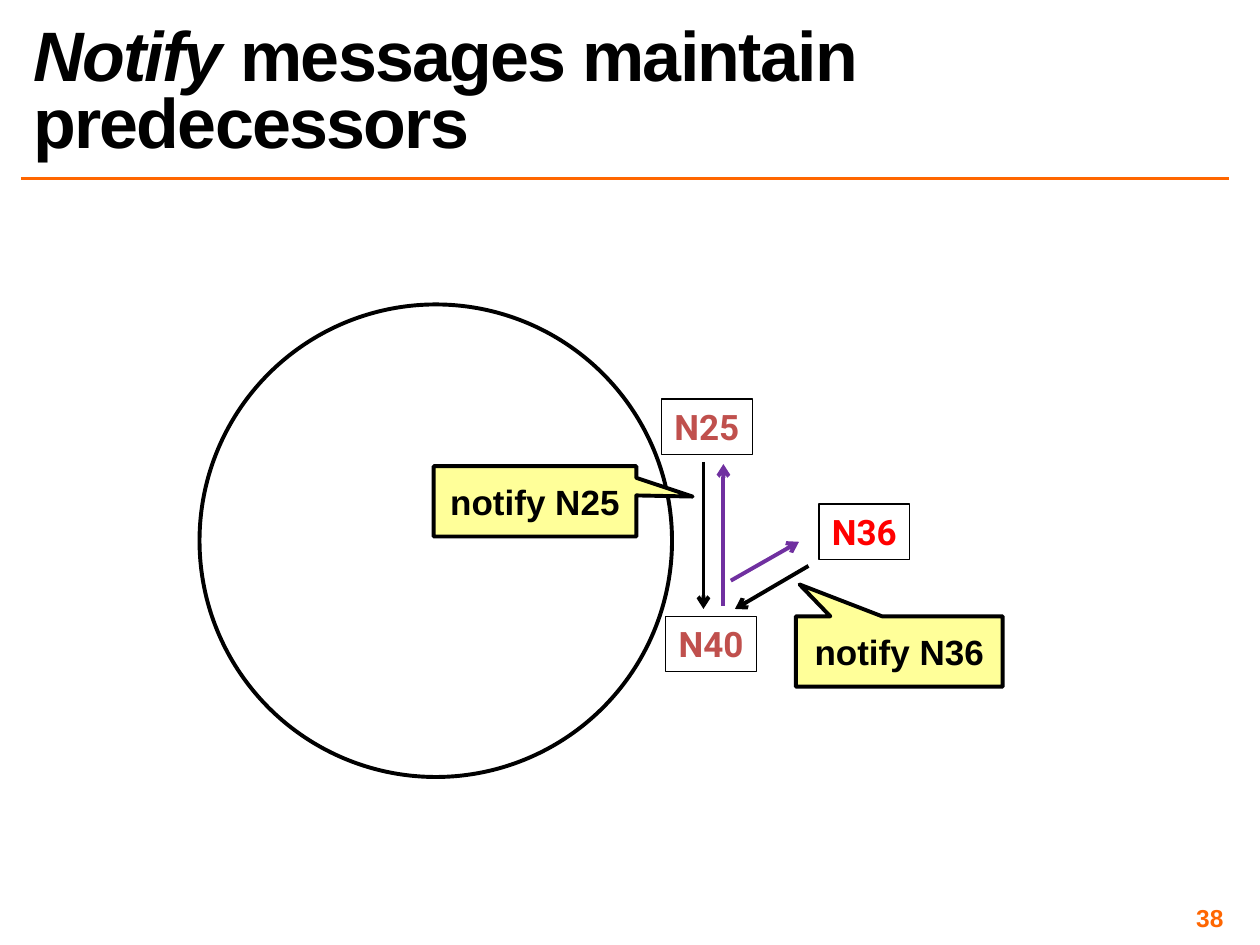
import lxml.etree
import pptx
import pptx.dml.color
import pptx.enum.shapes
import pptx.enum.text
import pptx.oxml.ns
import pptx.util

THEME = {
    "ink": "000000", "accent": "FF6600", "node": "C0504D", "new_node": "FF0000",
    "pointer": "7030A0", "callout": "FFFF99",
    "font": "Arial", "node_font": "Roboto",
    "title": 40, "body": 20, "number": 14,
    "thin": 0.75, "rule": 2, "thick": 2.25,
}
SHAPE = pptx.enum.shapes.MSO_SHAPE
ALIGN = pptx.enum.text.PP_ALIGN
ANCHOR = pptx.enum.text.MSO_ANCHOR
qn = pptx.oxml.ns.qn
rgb = pptx.dml.color.RGBColor.from_string

deck = pptx.Presentation()
deck.slide_width, deck.slide_height = pptx.util.Inches(10), pptx.util.Inches(7.5)
slide = deck.slides.add_slide(deck.slide_layouts[6])

# Grid of 120 columns by 90 rows; a cell is square
CELL = deck.slide_width / 120


def grid(*counts):
    return [pptx.util.Emu(round(count * CELL)) for count in counts]


def style_text(frame, size, color, align, anchor, font=THEME["font"]):
    frame.vertical_anchor = anchor
    for paragraph in frame.paragraphs:
        paragraph.alignment = align
        for run in paragraph.runs:
            run.font.size = pptx.util.Pt(THEME[size])
            run.font.name = font
            run.font.bold = True
            run.font.color.rgb = rgb(THEME[color])


# Title
title = slide.shapes.add_textbox(*grid(2, 2, 115, 14)).text_frame
title.word_wrap = True
heading = title.paragraphs[0]
heading.line_spacing = 0.8
for words, italic in (("Notify", True), (" messages maintain predecessors", False)):
    run = heading.add_run()
    run.text = words
    run.font.italic = italic
    run.font._element.set("spc", "-100")
style_text(title, "title", "ink", ALIGN.LEFT, ANCHOR.BOTTOM)

# Page number
number = slide.shapes.add_textbox(*grid(89, 86, 28, 2.8)).text_frame
number.margin_left = number.margin_right = pptx.util.Inches(0.04)
number.margin_top = number.margin_bottom = pptx.util.Inches(0.04)
number.word_wrap = True
number.text = "38"
style_text(number, "number", "accent", ALIGN.RIGHT, ANCHOR.MIDDLE)

# Identifier ring
ring = slide.shapes.add_shape(SHAPE.OVAL, *grid(19, 29, 45, 45))
ring.shadow.inherit = False
ring.fill.background()
ring.line.color.rgb = rgb(THEME["ink"])
ring.line.width = pptx.util.Pt(THEME["thick"])

# Nodes
for name, column, row, color in (
    ("N36", 78, 48, "new_node"),
    ("N40", 63.4, 58.7, "node"),
    ("N25", 63, 38, "node"),
):
    node = slide.shapes.add_shape(SHAPE.RECTANGLE, *grid(column, row, 8.64, 5.28))
    node.shadow.inherit = False
    node.fill.background()
    node.line.color.rgb = rgb(THEME["ink"])
    node.line.width = pptx.util.Pt(THEME["thin"])
    node.text_frame.text = name
    node.text_frame.word_wrap = False
    node.text_frame.auto_size = pptx.enum.text.MSO_AUTO_SIZE.SHAPE_TO_FIT_TEXT
    style_text(node.text_frame, "body", color, ALIGN.CENTER, ANCHOR.TOP, THEME["node_font"])

# Callouts
for words, box, tip in (
    ("notify N36", (75.8, 58.7, 19.7, 6.7), (-0.482, -0.953)),
    ("notify N25", (41.3, 44.4, 19.3, 6.7), (0.778, -0.067)),
):
    callout = slide.shapes.add_shape(SHAPE.RECTANGULAR_CALLOUT, *grid(*box))
    callout.shadow.inherit = False
    callout.adjustments[0], callout.adjustments[1] = tip
    callout.fill.solid()
    callout.fill.fore_color.rgb = rgb(THEME["callout"])
    callout.line.color.rgb = rgb(THEME["ink"])
    callout.line.width = pptx.util.Pt(THEME["thick"])
    callout.text_frame.text = words
    style_text(callout.text_frame, "body", "ink", ALIGN.CENTER, ANCHOR.MIDDLE)

# Title rule, notify messages (black) and predecessor pointers (purple)
for ends, color, weight, arrow in (
    ((2, 17, 117, 17), "accent", "rule", False),
    ((67, 44, 67, 58), "ink", "thick", True),
    ((77, 53.9, 70, 58), "ink", "thick", True),
    ((68.9, 57.7, 68.9, 44.2), "pointer", "thick", True),
    ((69.6, 55.3, 76.1, 51.6), "pointer", "thick", True),
):
    link = slide.shapes.add_connector(pptx.enum.shapes.MSO_CONNECTOR.STRAIGHT, *grid(*ends))
    link.line.color.rgb = rgb(THEME[color])
    link.line.width = pptx.util.Pt(THEME[weight])
    properties = link._element.spPr
    if arrow:
        lxml.etree.SubElement(properties.find(qn("a:ln")), qn("a:tailEnd"), type="arrow")
    lxml.etree.SubElement(properties, qn("a:effectLst"))

deck.save("out.pptx")
